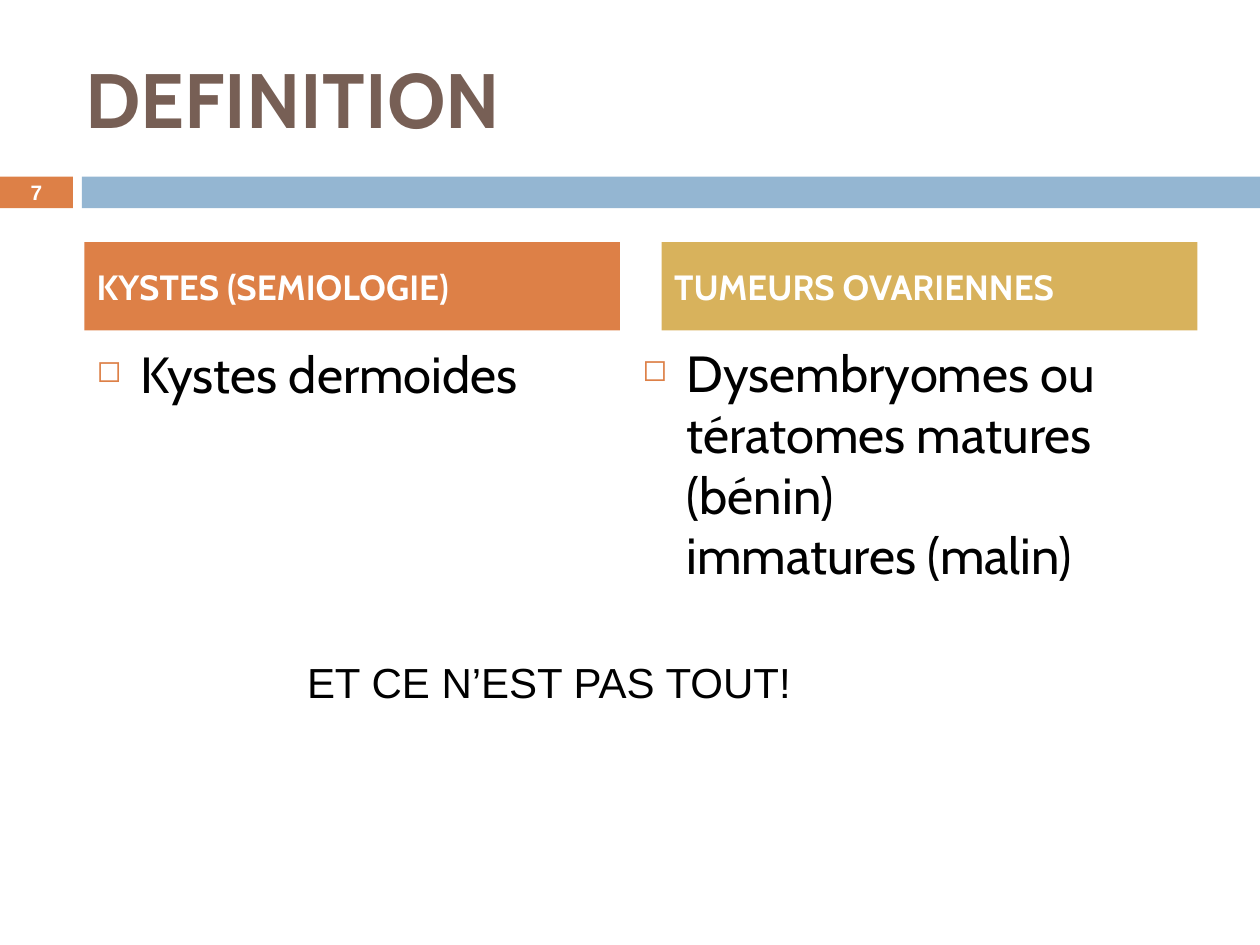
from lxml.etree import SubElement as Sub
from pptx import Presentation
from pptx.dml.color import RGBColor as Rgb
from pptx.enum.shapes import MSO_SHAPE as Kind
from pptx.enum.text import MSO_ANCHOR as Anchor, PP_ALIGN as Align
from pptx.oxml.ns import qn
from pptx.util import Cm, Pt

HUES = {
    "orange": "DD8047",
    "blue": "94B6D2",
    "gold": "D8B25C",
    "brown": "775F55",
    "white": "FFFFFF",
    "black": "000000",
}
WIDE, LEFT = 10.8, 1.7  # column width and left margin


def tint(name):
    return Rgb.from_string(HUES[name])


class Deck:
    """Holds the style and the current slide; lengths are in cm."""

    font = "Cabin"

    def __init__(self):
        self.show = Presentation()
        self.show.slide_width, self.show.slide_height = Cm(25.4), Cm(19.05)
        self.slide = self.show.slides.add_slide(self.show.slide_layouts[6])

    def bar(self, box, hue):
        bar = self.slide.shapes.add_shape(Kind.RECTANGLE, *map(Cm, box))
        bar.shadow.inherit = False
        bar.fill.solid()
        bar.fill.fore_color.rgb = tint(hue)
        bar.line.fill.background()
        return bar

    def fill(self, shape, text, size, hue, bold=False, font=None,
             anchor=Anchor.MIDDLE, align=Align.LEFT, gap=0):
        """Put one styled paragraph into the shape and return it."""
        frame = shape.text_frame
        frame.word_wrap = True
        frame.vertical_anchor = anchor
        para = frame.paragraphs[0]
        para.text = text
        para.alignment = align
        para.space_before = Pt(gap)
        for run in para.runs:
            run.font.name = font or self.font
            run.font.size = Pt(size)
            run.font.bold = bold
            run.font.color.rgb = tint(hue)
        return para

    def label(self, box, text, size, hue, **look):
        shape = self.slide.shapes.add_textbox(*map(Cm, box))
        return self.fill(shape, text, size, hue, **look)

    def head(self, left, text, hue):
        bar = self.bar((left, 4.88, WIDE, 1.78), hue)
        self.fill(bar, text, 20, "white", bold=True, gap=7)

    def item(self, left, top, text):
        """Add a column of text with a hollow square bullet."""
        para = self.label((left, top, WIDE, 9.96), text, 29, "black",
                          anchor=Anchor.TOP, gap=7)
        props = para._p.get_or_add_pPr()
        props.set("marL", str(Cm(0.89)))
        props.set("indent", str(-Cm(0.89)))
        color = Sub(props, qn("a:buClr"))
        Sub(color, qn("a:srgbClr"), val=HUES["orange"])
        Sub(props, qn("a:buSzPct"), val="60000")
        Sub(props, qn("a:buChar"), char="◻")


def main():
    deck = Deck()
    deck.bar((0, 3.56, 1.47, 0.64), "orange")
    deck.bar((1.65, 3.56, 23.75, 0.64), "blue")
    deck.label((1.47, 0.76, 22.66, 2.41), "DEFINITION", 44, "brown", bold=True)
    deck.label((0, 3.53, 1.47, 0.69), "7", 11.9, "white", bold=True,
               font="Arial", align=Align.CENTER)

    deck.head(LEFT, "KYSTES (SEMIOLOGIE)", "orange")
    deck.head(13.34, "TUMEURS OVARIENNES", "gold")
    deck.item(LEFT, 6.78, "Kystes dermoides")
    deck.item(12.7, 6.76,
              "Dysembryomes ou tératomes matures (bénin)\vimmatures (malin)")

    deck.label((5.94, 13.11, 11.13, 1.3), "ET CE N’EST PAS TOUT!", 24, "black",
               font="Arial", anchor=Anchor.TOP)
    deck.show.save("out.pptx")


if __name__ == "__main__":
    main()
